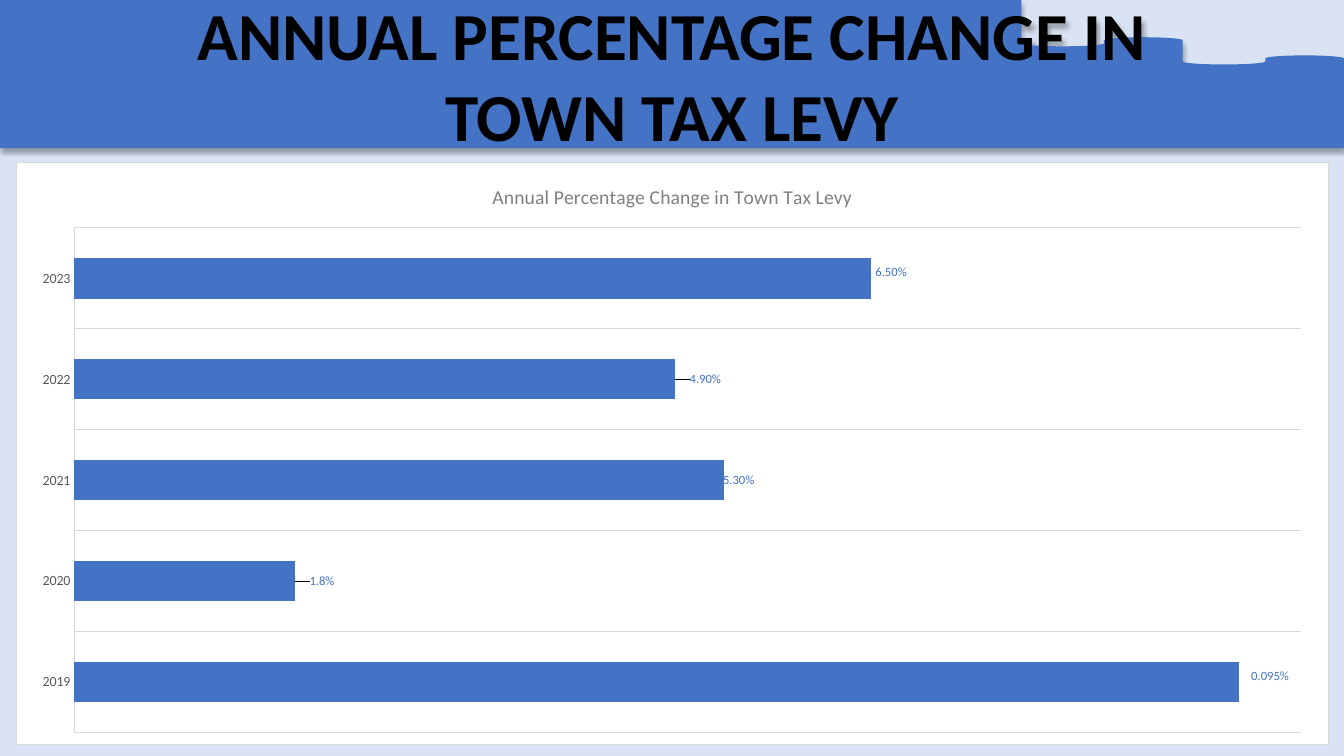
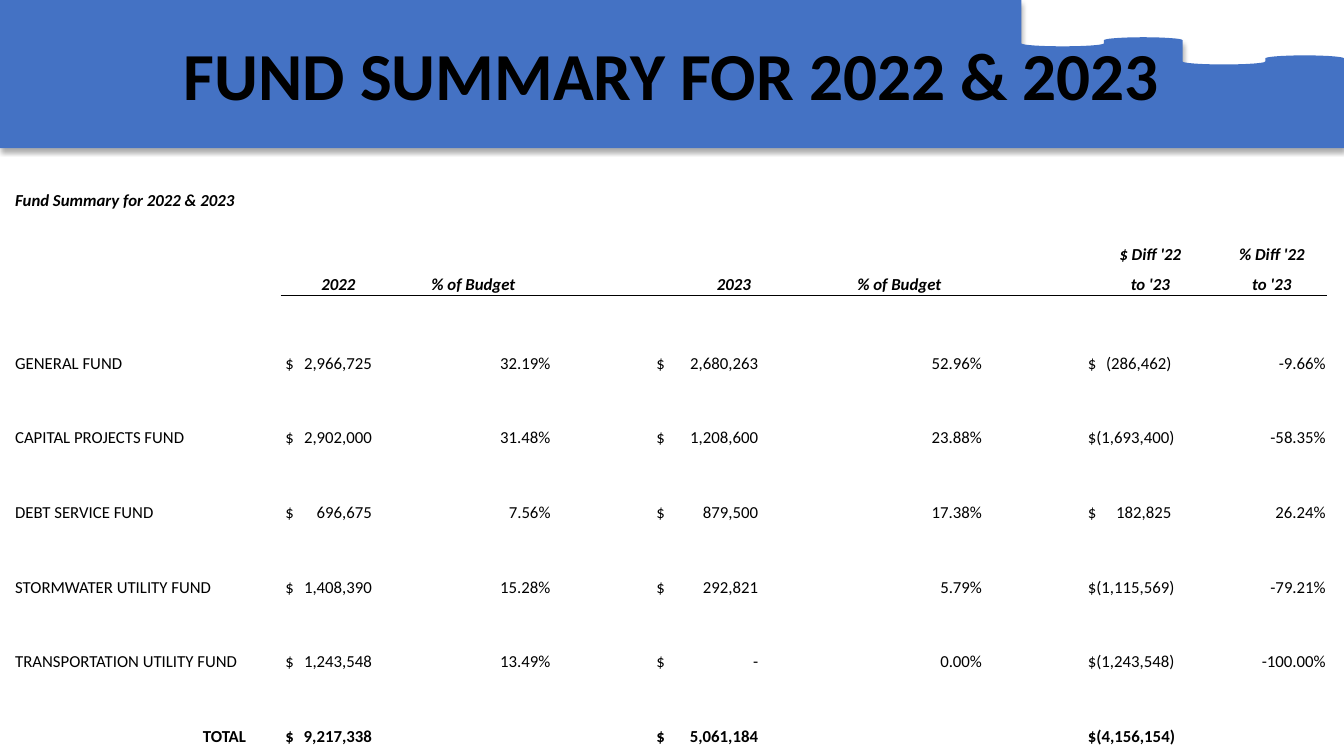
"""Build two town budget slides: the tax levy chart and the fund summary table."""
import math

from lxml import etree
from pptx import Presentation
from pptx import util as u
from pptx.chart.data import CategoryChartData
from pptx.dml.color import RGBColor
from pptx.enum import chart as ch
from pptx.enum import text as tx
from pptx.oxml import parse_xml
from pptx.oxml.ns import nsdecls, qn

BLUE = RGBColor(0x44, 0x72, 0xC4)
PALE_BLUE = RGBColor(0xDA, 0xE3, 0xF3)
WHITE = RGBColor(0xFF, 0xFF, 0xFF)
BLACK = RGBColor(0, 0, 0)
AXIS_GREY = RGBColor(0x59, 0x59, 0x59)
TITLE_GREY = RGBColor(0x7F, 0x7F, 0x7F)
RULE_GREY = RGBColor(0xD9, 0xD9, 0xD9)
FONT = "Calibri"

WIDTH, HEIGHT, BAND_HEIGHT, CONTENT_TOP = 13.33, 7.5, 1.47, 1.61
WAVE_LEFT, DIP_WIDTH, CREST_WIDTH = 10.13, 0.82, 0.78
WAVE_TOP, WAVE_DROP, WAVE_DEPTH = 0.43, 0.18, 0.03

LEVY_TITLE = ["ANNUAL PERCENTAGE CHANGE IN", "TOWN TAX LEVY"]
LEVY_CAPTION = "Annual Percentage Change in Town Tax Levy"
LEVY = [
    ("2019", 0.095, "0.095%", (0.006, -0.01)),
    ("2020", 0.018, "1.8%", (0.008, 0)),
    ("2021", 0.053, "5.30%", (-0.004, 0)),
    ("2022", 0.049, "4.90%", (0.008, 0)),
    ("2023", 0.065, "6.50%", (0, -0.01)),
]

FUND_TITLE = ["FUND SUMMARY FOR 2022 & 2023"]
FUND_CAPTION = "Fund Summary for 2022 & 2023"
DIFF_HEADS = {7: "$ Diff '22", 8: "% Diff '22"}
HEADS = {1: "2022", 2: "% of Budget", 4: "2023", 5: "% of Budget",
         7: "to '23", 8: "to '23"}
FUNDS = [
    ("GENERAL FUND", "2,966,725", "32.19%", "2,680,263", "52.96%", "(286,462)", "-9.66%"),
    ("CAPITAL PROJECTS FUND", "2,902,000", "31.48%", "1,208,600", "23.88%", "(1,693,400)", "-58.35%"),
    ("DEBT SERVICE FUND", "696,675", "7.56%", "879,500", "17.38%", "182,825", "26.24%"),
    ("STORMWATER UTILITY FUND", "1,408,390", "15.28%", "292,821", "5.79%", "(1,115,569)", "-79.21%"),
    ("TRANSPORTATION UTILITY FUND", "1,243,548", "13.49%", "-", "0.00%", "(1,243,548)", "-100.00%"),
    ("TOTAL", "9,217,338", "", "5,061,184", "", "(4,156,154)", ""),
]
FUND_COLUMNS = (0, 1, 2, 4, 5, 7, 8)
AMOUNT_TABS = {1: 0.86, 4: 1.01, 7: 0.83}
FULL_WIDTH_AMOUNT = len("(0,000,000)")
COLUMN_WIDTHS = [2.65, 1.13, 1.55, 1, 1.62, 1.66, 1, 1.32, 1.09]
FUND_ROW, GAP_ROW = 0.49, 0.25
ROW_HEIGHTS = [0.48, 0.25, 0.29, 0.3, 0.29] + [FUND_ROW, GAP_ROW] * 5 + [FUND_ROW]
HEAD_ROW, FIRST_FUND_ROW = 3, 5


def style_font(font, size, color=BLACK, bold=False, italic=False):
    font.name, font.size, font.bold, font.italic = FONT, u.Pt(size), bold, italic
    font.color.rgb = color


def add_run(paragraph, words, size, color=BLACK, bold=False, italic=False):
    run = paragraph.add_run()
    run.text = words
    style_font(run.font, size, color, bold, italic)


def arc(left, width, level, depth, steps=24):
    angles = [math.pi * i / steps for i in range(steps + 1)]
    return [(left + width * (1 - math.cos(a)) / 2, level + depth * math.sin(a))
            for a in angles]


def band_outline():
    edge = []
    for step in range(2):
        left = WAVE_LEFT + step * (DIP_WIDTH + CREST_WIDTH)
        level = WAVE_TOP + step * WAVE_DROP
        edge += arc(left, DIP_WIDTH, level, WAVE_DEPTH)
        edge += arc(left + DIP_WIDTH, CREST_WIDTH, level - WAVE_DEPTH, -WAVE_DEPTH)
    return [(WAVE_LEFT, 0)] + edge + [(WIDTH, BAND_HEIGHT), (0, BAND_HEIGHT)]


def add_title_band(slide, lines):
    builder = slide.shapes.build_freeform(0, 0)
    builder.add_line_segments(
        [(u.Inches(x), u.Inches(y)) for x, y in band_outline()], close=True)
    band = builder.convert_to_shape()
    band.fill.solid()
    band.fill.fore_color.rgb = BLUE
    band.line.fill.background()
    band.shadow.inherit = False
    effects = band._element.spPr.find(qn("a:effectLst"))
    effects.append(parse_xml(
        f'<a:outerShdw {nsdecls("a")} blurRad="{u.Pt(3.5)}" dist="{u.Pt(2.2)}" '
        'dir="5400000" algn="t" rotWithShape="0"><a:srgbClr val="000000">'
        '<a:alpha val="32000"/></a:srgbClr></a:outerShdw>'))
    frame = band.text_frame
    frame.word_wrap = True
    frame.vertical_anchor = tx.MSO_ANCHOR.MIDDLE
    for i, line in enumerate(lines):
        paragraph = frame.add_paragraph() if i else frame.paragraphs[0]
        paragraph.alignment = tx.PP_ALIGN.CENTER
        add_run(paragraph, line, 48, bold=True)


def new_slide(deck, background):
    slide = deck.slides.add_slide(deck.slide_layouts[6])
    slide.background.fill.solid()
    slide.background.fill.fore_color.rgb = background
    return slide


def manual_layout(x, y, size=None):
    parts = [("x", x), ("y", y)]
    if size:
        parts = ([("layoutTarget", "inner"), ("xMode", "edge"), ("yMode", "edge")]
                 + parts + list(zip("wh", size)))
    body = "".join(f'<c:{tag} val="{value}"/>' for tag, value in parts)
    return parse_xml(f'<c:layout {nsdecls("c")}><c:manualLayout>{body}'
                     '</c:manualLayout></c:layout>')


def thin_grey(line):
    line.color.rgb = RULE_GREY
    line.width = u.Pt(0.75)


def label_bars(bars, labels, shifts):
    style_font(bars.data_labels.font, 9, BLUE)
    bars.data_labels.show_value = True
    for i, label in enumerate(labels):
        tag = bars.points[i].data_label
        add_run(tag.text_frame.paragraphs[0], label, 9, BLUE)
        tag.position = ch.XL_LABEL_POSITION.OUTSIDE_END
    for node, shift in zip(bars._element.iter(qn("c:dLbl")), shifts):
        node.insert(1, manual_layout(*shift))
    group = bars._element.find(qn("c:dLbls"))
    for leader in group.findall(qn("c:showLeaderLines")):
        group.remove(leader)
    group.append(parse_xml(
        f'<c:extLst {nsdecls("c")}><c:ext uri="{{CE6537A1-D6FC-4f65-9D91-7224C49458BB}}" '
        'xmlns:c15="http://schemas.microsoft.com/office/drawing/2012/chart">'
        '<c15:showLeaderLines val="0"/></c:ext></c:extLst>'))


def add_levy_chart(slide):
    years, rates, labels, shifts = zip(*LEVY)
    data = CategoryChartData(number_format="0.0%")
    data.categories = years
    data.add_series("Series 1", rates)
    chart = slide.shapes.add_chart(
        ch.XL_CHART_TYPE.BAR_CLUSTERED, u.Inches(0.16), u.Inches(CONTENT_TOP),
        u.Inches(13.02), u.Inches(5.78), data).chart
    chart.font.name, chart.font.size = FONT, u.Pt(10)
    chart.has_legend = False
    chart.has_title = True
    add_run(chart.chart_title.text_frame.paragraphs[0], LEVY_CAPTION, 14, TITLE_GREY)

    year_axis, rate_axis = chart.category_axis, chart.value_axis
    year_axis.major_tick_mark = ch.XL_TICK_MARK.NONE
    year_axis.has_major_gridlines = True
    thin_grey(year_axis.major_gridlines.format.line)
    thin_grey(year_axis.format.line)
    style_font(year_axis.tick_labels.font, 10, AXIS_GREY)
    rate_axis.minimum_scale, rate_axis.maximum_scale = 0, 0.1
    rate_axis.has_major_gridlines = False
    rate_axis.visible = False

    plot = chart.plots[0]
    plot.gap_width = 150
    plot.vary_by_categories = False
    bars = plot.series[0]
    bars.format.fill.solid()
    bars.format.fill.fore_color.rgb = BLUE
    label_bars(bars, labels, shifts)

    space = chart._chartSpace
    area = space.find(qn("c:chart")).find(qn("c:plotArea"))
    for old in area.findall(qn("c:layout")):
        area.remove(old)
    area.insert(0, manual_layout(0.044, 0.112, (0.935, 0.868)))
    space.find(qn("c:chart")).addnext(parse_xml(
        f'<c:spPr {nsdecls("c", "a")}><a:solidFill><a:srgbClr val="{WHITE}"/></a:solidFill>'
        f'<a:ln w="{u.Pt(0.75)}"><a:solidFill><a:srgbClr val="{RULE_GREY}"/></a:solidFill>'
        '</a:ln></c:spPr>'))


def clear_cell(cell):
    cell.fill.background()
    cell.vertical_anchor = tx.MSO_ANCHOR.BOTTOM
    cell.margin_left = cell.margin_right = cell.margin_top = u.Inches(0.01)
    cell.margin_bottom = 0
    paragraph = cell.text_frame.paragraphs[0]._p
    etree.SubElement(paragraph, qn("a:endParaRPr"), sz="800")


def write_cell(cell, words, align=tx.PP_ALIGN.LEFT, **style):
    paragraph = cell.text_frame.paragraphs[0]
    paragraph.alignment = align
    add_run(paragraph, words, 12, **style)
    return paragraph


def write_amount(cell, amount, tab, bold):
    cell.margin_left = u.Inches(0.04)
    gap = "" if len(amount) == FULL_WIDTH_AMOUNT else "\t"
    paragraph = write_cell(cell, f"${gap}{amount}", bold=bold)
    if gap:
        paragraph._p.get_or_add_pPr().append(parse_xml(
            f'<a:tabLst {nsdecls("a")}><a:tab pos="{u.Inches(tab)}" algn="r"/></a:tabLst>'))


def draw_edge(cell, edge):
    cell._tc.get_or_add_tcPr().insert(0, parse_xml(
        f'<a:{edge} {nsdecls("a")} w="{u.Pt(1)}"><a:solidFill><a:srgbClr val="{BLACK}"/>'
        f'</a:solidFill></a:{edge}>'))


def add_fund_table(slide):
    table = slide.shapes.add_table(
        len(ROW_HEIGHTS), len(COLUMN_WIDTHS), u.Inches(0.14), u.Inches(CONTENT_TOP),
        u.Inches(sum(COLUMN_WIDTHS)), u.Inches(sum(ROW_HEIGHTS))).table
    table.first_row = table.horz_banding = False
    for column, width in zip(table.columns, COLUMN_WIDTHS):
        column.width = u.Inches(width)
    for row, height in zip(table.rows, ROW_HEIGHTS):
        row.height = u.Inches(height)
    for cell in table.iter_cells():
        clear_cell(cell)

    table.cell(0, 0).merge(table.cell(0, 1))
    write_cell(table.cell(0, 0), FUND_CAPTION, bold=True, italic=True)
    for row, heads in ((HEAD_ROW - 1, DIFF_HEADS), (HEAD_ROW, HEADS)):
        for column, head in heads.items():
            write_cell(table.cell(row, column), head, tx.PP_ALIGN.CENTER,
                       bold=True, italic=True)
    for column in range(1, len(COLUMN_WIDTHS)):
        draw_edge(table.cell(HEAD_ROW, column), "lnB")
        draw_edge(table.cell(HEAD_ROW + 1, column), "lnT")

    for i, fund in enumerate(FUNDS):
        total = fund is FUNDS[-1]
        for column, words in zip(FUND_COLUMNS, fund):
            cell = table.cell(FIRST_FUND_ROW + 2 * i, column)
            if column in AMOUNT_TABS:
                write_amount(cell, words, AMOUNT_TABS[column], total)
            elif words:
                right = column > 0 or total
                write_cell(cell, words, tx.PP_ALIGN.RIGHT if right else tx.PP_ALIGN.LEFT,
                           bold=total)
                if total:
                    cell.margin_right = u.Inches(0.35)


def main():
    deck = Presentation()
    deck.slide_width, deck.slide_height = u.Inches(WIDTH), u.Inches(HEIGHT)
    for background, add_content, title in (
            (PALE_BLUE, add_levy_chart, LEVY_TITLE),
            (WHITE, add_fund_table, FUND_TITLE)):
        slide = new_slide(deck, background)
        add_content(slide)
        add_title_band(slide, title)
    deck.save("out.pptx")


if __name__ == "__main__":
    main()
